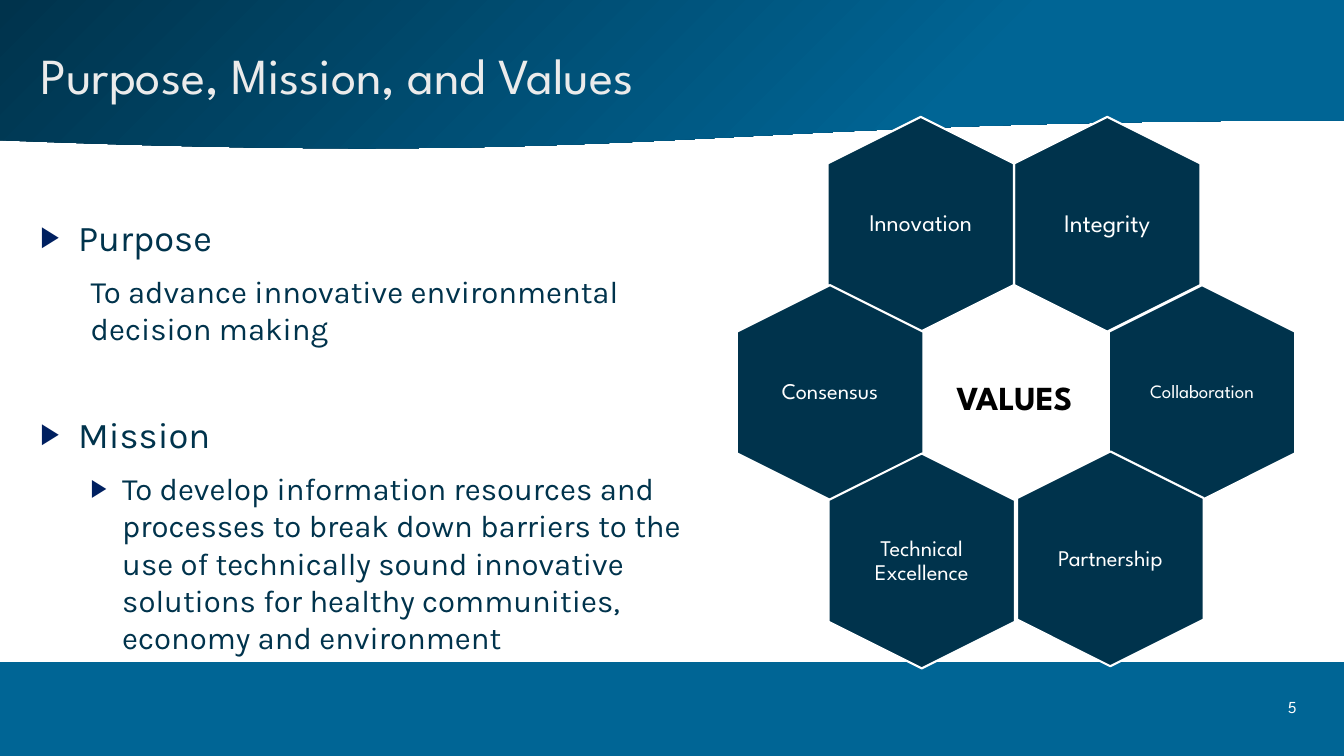
from dataclasses import dataclass

from lxml import etree
from pptx import Presentation
from pptx.dml.color import RGBColor
from pptx.enum.shapes import MSO_SHAPE
from pptx.enum.text import MSO_ANCHOR, MSO_AUTO_SIZE, PP_ALIGN
from pptx.oxml.ns import qn
from pptx.shapes.autoshape import Shape
from pptx.slide import Slide
from pptx.text.text import TextFrame, _Paragraph
from pptx.util import Pt

HEXAGON = MSO_SHAPE.HEXAGON
WAVE = MSO_SHAPE.FLOWCHART_DOCUMENT
RECTANGLE = MSO_SHAPE.RECTANGLE
MIDDLE = MSO_ANCHOR.MIDDLE
TOP = MSO_ANCHOR.TOP
LEFT = PP_ALIGN.LEFT
CENTER = PP_ALIGN.CENTER
NO_AUTOFIT = MSO_AUTO_SIZE.NONE

COLORS = {
    "navy": "00334C",
    "blue": "006595",
    "bullet": "002060",
    "title": "EBEBEB",
    "white": "FFFFFF",
    "black": "000000",
}
HEADING_FONT = "League Spartan"
BODY_FONT = "Karla"
SLIDE_WIDTH, SLIDE_HEIGHT = 960, 540
HEXAGON_WIDTH, HEXAGON_HEIGHT = 153.4, 133.2
LABEL_WIDTH, LABEL_HEIGHT = 91.4, 105.1


@dataclass(frozen=True)
class Box:
    left: float
    top: float
    width: float
    height: float


@dataclass(frozen=True)
class Value:
    label: str
    center_x: float
    center_y: float
    size: float
    inset: float = 0


@dataclass(frozen=True)
class Item:
    text: str
    level: int
    size: float
    margin: float
    hanging: float
    space_before: float
    bulleted: bool = True


VALUES = [
    Value("Integrity", 790.9, 160.2, 18, 5),
    Value("Innovation", 657.7, 160.2, 17),
    Value("Consensus", 592.9, 280.4, 16, 5),
    Value("Collaboration", 858.6, 280.4, 13.5),
    Value("Partnership", 793.1, 399.2, 16),
    Value("Technical Excellence", 658.4, 400.7, 16),
]
ITEMS = [
    Item("Purpose", 0, 25.9, 27, 27, 0),
    Item("To advance innovative environmental decision making", 1, 22.2, 36, 0, 10, False),
    Item("Mission", 0, 25.9, 27, 27, 46.5),
    Item(
        "To develop information resources and processes to break down barriers "
        "to the use of technically sound innovative solutions for healthy "
        "communities, economy and environment",
        1, 22.2, 58.5, 22.5, 10,
    ),
]


def color(name: str) -> RGBColor:
    return RGBColor.from_string(COLORS[name])


def place(shape: Shape, box: Box) -> None:
    shape.left, shape.top = Pt(box.left), Pt(box.top)
    shape.width, shape.height = Pt(box.width), Pt(box.height)


def centered_box(center_x: float, center_y: float, width: float, height: float) -> Box:
    return Box(center_x - width / 2, center_y - height / 2, width, height)


def add_run(paragraph: _Paragraph, text: str, font: str, size: float,
            color_name: str, bold: bool = False) -> None:
    run = paragraph.add_run()
    run.text = text
    run.font.name = font
    run.font.size = Pt(size)
    run.font.bold = bold
    run.font.color.rgb = color(color_name)


def add_shape(slide: Slide, kind: MSO_SHAPE, box: Box) -> Shape:
    shape = slide.shapes.add_shape(
        kind, Pt(box.left), Pt(box.top), Pt(box.width), Pt(box.height))
    shape.shadow.inherit = False
    return shape


def add_background(slide: Slide) -> None:
    header = add_shape(slide, WAVE, Box(0, 0, SLIDE_WIDTH, 107.3))
    header.fill.gradient()
    header.fill.gradient_angle = 315
    for stop, name, position in zip(header.fill.gradient_stops, ("navy", "blue"), (0, 0.71)):
        stop.color.rgb = color(name)
        stop.position = position
    footer = add_shape(slide, RECTANGLE, Box(0, 473, SLIDE_WIDTH, 67))
    footer.fill.solid()
    footer.fill.fore_color.rgb = color("blue")
    tree = header.element.getparent()
    for index, band in enumerate((header, footer), start=2):
        band.line.fill.background()
        tree.insert(index, band.element)


def add_label(slide: Slide, box: Box, text: str, size: float,
              color_name: str = "white", bold: bool = False) -> TextFrame:
    label = slide.shapes.add_textbox(
        Pt(box.left), Pt(box.top), Pt(box.width), Pt(box.height))
    frame = label.text_frame
    frame.word_wrap = True
    paragraph = frame.paragraphs[0]
    paragraph.alignment = CENTER
    add_run(paragraph, text, HEADING_FONT, size, color_name, bold)
    return frame


def add_value(slide: Slide, value: Value) -> None:
    hexagon = add_shape(slide, HEXAGON, centered_box(
        value.center_x, value.center_y, HEXAGON_WIDTH, HEXAGON_HEIGHT))
    hexagon.rotation = 90
    hexagon.adjustments[0] = 0.25
    hexagon.fill.solid()
    hexagon.fill.fore_color.rgb = color("navy")
    hexagon.line.color.rgb = color("white")
    hexagon.line.width = Pt(1.5)
    frame = add_label(slide, centered_box(
        value.center_x, value.center_y, LABEL_WIDTH, LABEL_HEIGHT), value.label, value.size)
    frame.vertical_anchor = MIDDLE
    frame.margin_left = frame.margin_right = Pt(value.inset)
    frame.margin_top = frame.margin_bottom = Pt(value.inset)
    frame.paragraphs[0].line_spacing = 0.9


def format_bullet(paragraph: _Paragraph, item: Item) -> None:
    properties = paragraph._p.get_or_add_pPr()
    properties.set("marL", str(Pt(item.margin)))
    properties.set("indent", str(-Pt(item.hanging)))
    if not item.bulleted:
        etree.SubElement(properties, qn("a:buNone"))
        return
    bullet_color = etree.SubElement(properties, qn("a:buClr"))
    etree.SubElement(bullet_color, qn("a:srgbClr"), val=COLORS["bullet"])
    etree.SubElement(properties, qn("a:buSzPct"), val="80000")
    etree.SubElement(properties, qn("a:buChar"), char="▶")


def fill_title(title: Shape) -> None:
    place(title, Box(21.6, 25.2, 689.8, 55.4))
    frame = title.text_frame
    frame.auto_size = NO_AUTOFIT
    frame.vertical_anchor = MIDDLE
    frame.paragraphs[0].alignment = LEFT
    add_run(frame.paragraphs[0], "Purpose, Mission, and Values", HEADING_FONT, 36, "title")


def fill_body(body: Shape) -> None:
    place(body, Box(21.6, 149.8, 491.8, 269.3))
    frame = body.text_frame
    frame.auto_size = NO_AUTOFIT
    frame.vertical_anchor = TOP
    for index, item in enumerate(ITEMS):
        paragraph = frame.add_paragraph() if index else frame.paragraphs[0]
        paragraph.level = item.level
        paragraph.space_before = Pt(item.space_before)
        format_bullet(paragraph, item)
        add_run(paragraph, item.text, BODY_FONT, item.size, "navy")


def main() -> None:
    presentation = Presentation()
    presentation.slide_width = Pt(SLIDE_WIDTH)
    presentation.slide_height = Pt(SLIDE_HEIGHT)
    slide = presentation.slides.add_slide(presentation.slide_layouts[1])
    add_background(slide)
    fill_title(slide.shapes.title)
    fill_body(slide.placeholders[1])
    add_label(slide, Box(904.3, 493.9, 37.4, 31.7), "5", 12)
    for value in VALUES:
        add_value(slide, value)
    add_label(slide, Box(671, 265.7, 107.3, 36), "VALUES", 24, "black", True)
    presentation.save("out.pptx")


if __name__ == "__main__":
    main()
